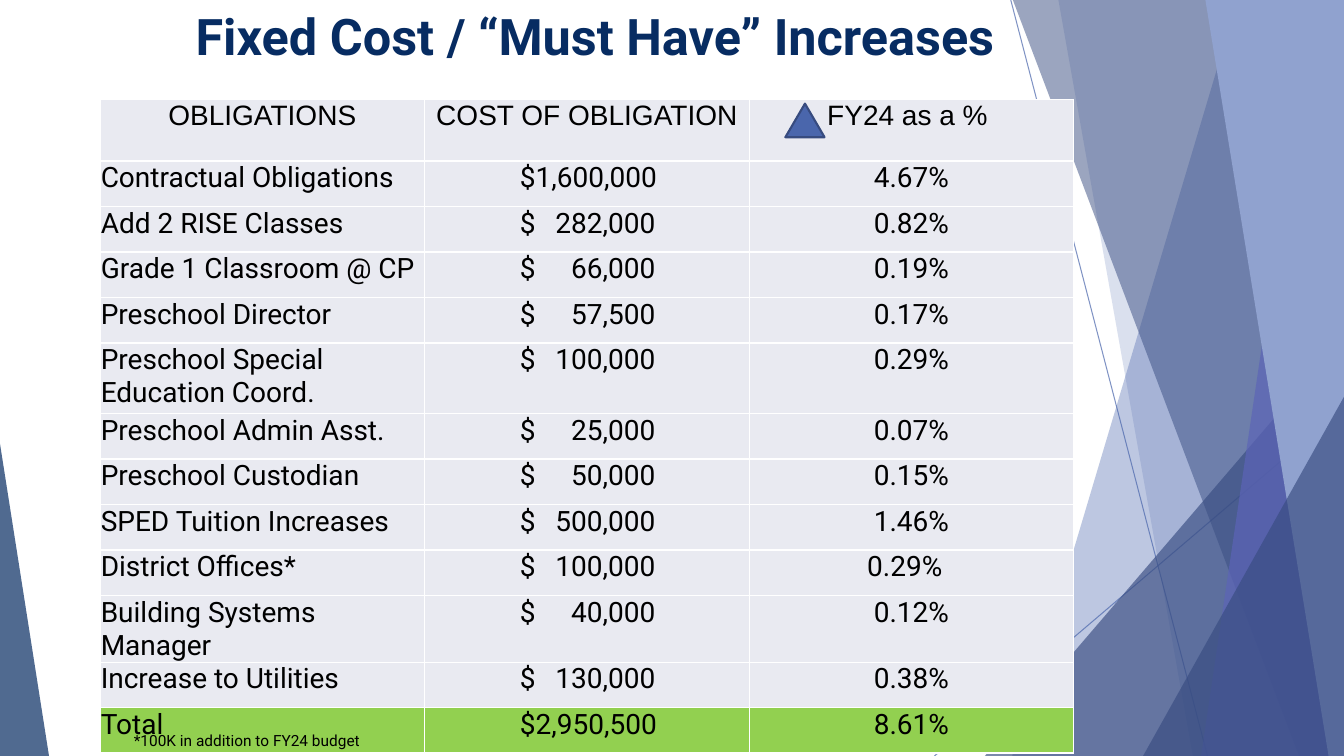
from lxml import etree
from pptx import Presentation
from pptx.dml.color import RGBColor
from pptx.enum.shapes import MSO_CONNECTOR, MSO_SHAPE
from pptx.enum.text import MSO_ANCHOR, PP_ALIGN
from pptx.oxml.ns import qn
from pptx.util import Pt

TRIANGLE = MSO_SHAPE.ISOSCELES_TRIANGLE
STRAIGHT = MSO_CONNECTOR.STRAIGHT
TOP = MSO_ANCHOR.TOP
LEFT, CENTER = PP_ALIGN.LEFT, PP_ALIGN.CENTER

WIDTH, HEIGHT = 960, 540
NAVY, BLUE, DEEP_BLUE, BLACK, WHITE = "072C62", "4A66AC", "384C81", "000000", "FFFFFF"
ROW_FILL, TOTAL_FILL = "E9EAF1", "92D050"
ROW_HEIGHT, AMOUNT_INDENT, AMOUNT_WIDTH = 32.5, 68, 97

HEADINGS = ["OBLIGATIONS", "COST OF OBLIGATION", "FY24 as a % "]
OBLIGATIONS = [
    ("Contractual Obligations", "1,600,000", "4.67%"),
    ("Add 2 RISE Classes", "282,000", "0.82%"),
    ("Grade 1 Classroom @ CP", "66,000", "0.19%"),
    ("Preschool Director", "57,500", "0.17%"),
    ("Preschool Special Education Coord.", "100,000", "0.29%"),
    ("Preschool Admin Asst.", "25,000", "0.07%"),
    ("Preschool Custodian", "50,000", "0.15%"),
    ("SPED Tuition Increases", "500,000", "1.46%"),
    ("District Offices*", "100,000", "0.29%"),
    ("Building Systems Manager", "40,000", "0.12%"),
    ("Increase to Utilities", "130,000", "0.38%"),
    ("Total", "2,950,500", "8.61%"),
]
SPECIAL_HEIGHTS = {0: 44, 5: 50.5, 10: 47}
DISTRICT_ROW = 9


def color(value):
    return RGBColor.from_string(value)


def add_run(paragraph, text, size, font, fill=BLACK, bold=False):
    run = paragraph.add_run()
    run.text = text
    run.font.size = Pt(size)
    run.font.name = font
    run.font.bold = bold
    run.font.color.rgb = color(fill)


def set_opacity(shape, percent):
    for tone in shape.element.xpath(".//p:spPr//a:srgbClr"):
        etree.SubElement(tone, qn("a:alpha")).set("val", str(percent * 1000))


def paint_facet(shape, fill, opacity):
    shape.shadow.inherit = False
    shape.fill.solid()
    shape.fill.fore_color.rgb = color(fill)
    shape.line.fill.background()
    set_opacity(shape, opacity)


def add_ray(shapes, x1, y1, x2, y2):
    ray = shapes.add_connector(STRAIGHT, Pt(x1), Pt(y1), Pt(x2), Pt(y2))
    ray.line.color.rgb = color(BLUE)
    ray.line.width = Pt(0.75)
    etree.SubElement(ray.element.spPr, qn("a:effectLst"))
    set_opacity(ray, 70)


def add_band(shapes, top_x, bottom_x, fill, opacity):
    """Full-height facet from a slanted left edge to the right slide edge."""
    builder = shapes.build_freeform(Pt(top_x), 0)
    corners = [(WIDTH, 0), (WIDTH, HEIGHT), (bottom_x, HEIGHT)]
    builder.add_line_segments([(Pt(x), Pt(y)) for x, y in corners], close=True)
    paint_facet(builder.convert_to_shape(), fill, opacity)


def add_corner(shapes, left, top, width, apex, fill, opacity):
    """Triangle standing on the bottom edge, apex 0 at its left or 1 at its right."""
    corner = shapes.add_shape(TRIANGLE, Pt(left), Pt(top), Pt(width), Pt(HEIGHT - top))
    corner.adjustments[0] = apex
    paint_facet(corner, fill, opacity)


def add_backdrop(slide):
    group = slide.shapes.add_group_shape()
    shapes = group.shapes
    add_ray(shapes, 722, 0, 862.5, HEIGHT)
    add_ray(shapes, WIDTH, 291, 667.5, HEIGHT)
    add_band(shapes, 884, 723, BLUE, 36)
    add_band(shapes, 756, 852, BLUE, 20)
    add_corner(shapes, 703.5, 240.5, 256.5, 1, DEEP_BLUE, 66)
    add_band(shapes, 723.5, 928, DEEP_BLUE, 50)
    add_band(shapes, 938, 858, "5C64B7", 70)
    add_band(shapes, 861, 949, "90A2CF", 100)
    add_corner(shapes, 816.5, 283.5, 143.5, 1, DEEP_BLUE, 66)
    add_corner(shapes, 0, 317, 35, 0, NAVY, 70)
    slide.shapes.title.element.addprevious(group.element)


def format_title(title, left, top, width, height):
    title.left, title.top, title.width, title.height = map(Pt, (left, top, width, height))
    title.text_frame.vertical_anchor = TOP
    paragraph = title.text_frame.paragraphs[0]
    paragraph.alignment = LEFT
    add_run(paragraph, "Fixed Cost / “Must Have” Increases", 36, "Roboto", NAVY, True)


def format_cell(cell, fill):
    cell.margin_left = cell.margin_right = cell.margin_top = Pt(0.5)
    cell.margin_bottom = 0
    cell.vertical_anchor = TOP
    cell.fill.solid()
    cell.fill.fore_color.rgb = color(fill)
    properties = cell._tc.get_or_add_tcPr()
    for position, side in enumerate(("lnL", "lnR", "lnT", "lnB")):
        border = etree.Element(qn(f"a:{side}"), w=str(Pt(1)))
        solid = etree.SubElement(border, qn("a:solidFill"))
        etree.SubElement(solid, qn("a:srgbClr"), val=WHITE)
        properties.insert(position, border)


def fill_amount(cell, amount):
    """Dollar sign at the indent, digits flush right at a tab stop."""
    cell.margin_left = Pt(AMOUNT_INDENT)
    paragraph = cell.text_frame.paragraphs[0]
    paragraph.alignment = LEFT
    fills_width = len(amount) == len("1,600,000")
    if not fills_width:
        tabs = etree.SubElement(paragraph._p.get_or_add_pPr(), qn("a:tabLst"))
        etree.SubElement(tabs, qn("a:tab"), pos=str(Pt(AMOUNT_WIDTH)), algn="r")
    add_run(paragraph, f"${amount}" if fills_width else f"$\t{amount}", 20, "Roboto")


def add_obligations_table(slide, left, top, width):
    rows = [HEADINGS, *OBLIGATIONS]
    heights = [SPECIAL_HEIGHTS.get(index, ROW_HEIGHT) for index in range(len(rows))]
    frame = slide.shapes.add_table(len(rows), len(HEADINGS), Pt(left), Pt(top),
                                   Pt(width), Pt(sum(heights)))
    table = frame.table
    table.first_row = table.horz_banding = False
    for column in table.columns:
        column.width = Pt(width / len(HEADINGS))
    for row_index, texts in enumerate(rows):
        table.rows[row_index].height = Pt(heights[row_index])
        is_header = row_index == 0
        fill = TOTAL_FILL if row_index == len(rows) - 1 else ROW_FILL
        for column_index, text in enumerate(texts):
            cell = table.cell(row_index, column_index)
            format_cell(cell, fill)
            if column_index == 1 and not is_header:
                fill_amount(cell, text)
                continue
            paragraph = cell.text_frame.paragraphs[0]
            paragraph.alignment = CENTER if is_header or column_index else LEFT
            add_run(paragraph, text, 20, "Arial" if is_header else "Roboto")
    table.cell(DISTRICT_ROW, 2).margin_right = Pt(10)


def add_delta_symbol(slide, left, top, width, height):
    delta = slide.shapes.add_shape(TRIANGLE, Pt(left), Pt(top), Pt(width), Pt(height))
    delta.shadow.inherit = False
    delta.fill.solid()
    delta.fill.fore_color.rgb = color(BLUE)
    delta.line.color.rgb = color("374B7F")
    delta.line.width = Pt(1.5)


def add_footnote(slide, left, top, width, height):
    footnote = slide.shapes.add_textbox(Pt(left), Pt(top), Pt(width), Pt(height))
    footnote.text_frame.word_wrap = True
    add_run(footnote.text_frame.paragraphs[0], "*100K in addition to FY24 budget", 11, "Roboto")


def add_cost_slide(presentation):
    slide = presentation.slides.add_slide(presentation.slide_layouts[5])
    add_backdrop(slide)
    format_title(slide.shapes.title, 132.5, 0, 695.5, 74)
    table_left, table_top = 71.5, 71
    add_obligations_table(slide, table_left, table_top, 695.5)
    add_delta_symbol(slide, table_left + 489.5, table_top + 3, 28, 24)
    add_footnote(slide, table_left + 17, table_top + 448, 226, 21)


def main():
    presentation = Presentation()
    presentation.slide_width, presentation.slide_height = Pt(WIDTH), Pt(HEIGHT)
    add_cost_slide(presentation)
    presentation.save("out.pptx")


if __name__ == "__main__":
    main()
